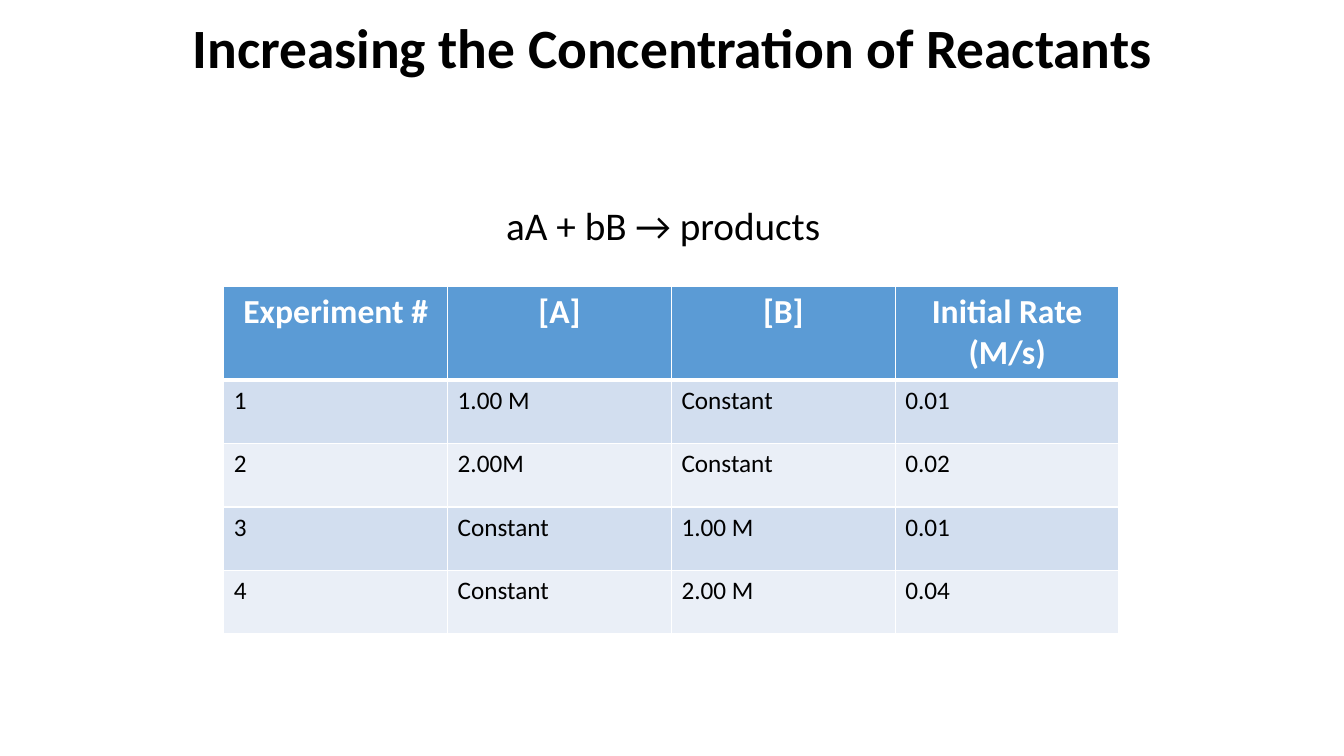
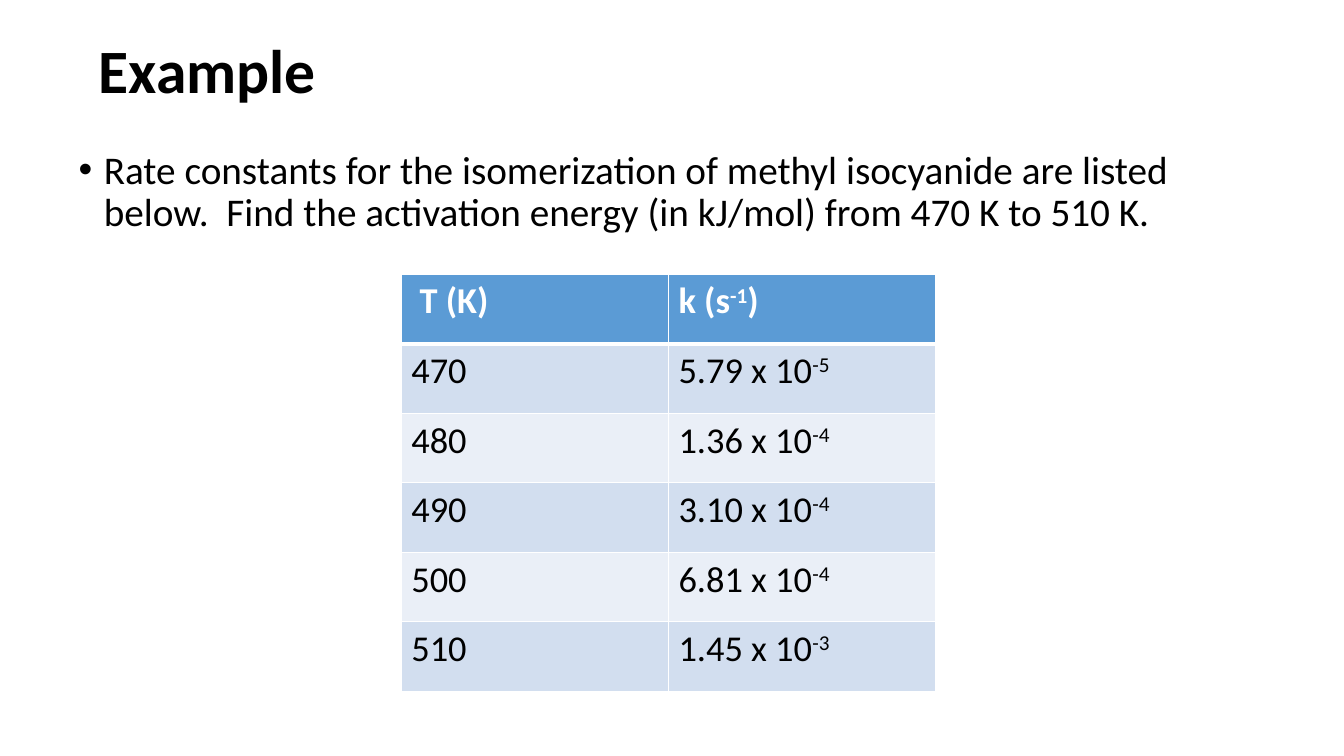
from lxml import etree
from pptx import Presentation
from pptx.dml.color import RGBColor
from pptx.enum.text import MSO_ANCHOR, MSO_AUTO_SIZE, PP_ALIGN
from pptx.oxml.ns import qn
from pptx.util import Inches, Pt

LEFT, CENTER = PP_ALIGN.LEFT, PP_ALIGN.CENTER
TOP, MIDDLE = MSO_ANCHOR.TOP, MSO_ANCHOR.MIDDLE
NO_AUTOFIT = MSO_AUTO_SIZE.NONE

FONT = "Calibri"
COLORS = {"text": "000000", "white": "FFFFFF", "header": "5B9BD5",
          "band_dark": "D2DEEF", "band_light": "EAEFF7"}
SUPERSCRIPT_MARK = "^"

SLIDES = [
    {
        "title": {"text": "Increasing the Concentration of Reactants",
                  "box": (0.92, 0.1, 11.5, 0.8), "size": 39.6, "align": CENTER},
        "body": {"text": "aA + bB → products", "box": (0.92, 2, 11.5, 0.6),
                 "indent": 4, "bullet": False},
        "table": {
            "at": (2.22, 2.84), "column_width": 2.22, "row_heights": (0.93, 0.63),
            "header_size": 24, "size": 18, "header_align": CENTER,
            "rows": [
                ("Experiment #", "[A]", "[B]", "Initial Rate (M/s)"),
                ("1", "1.00 M", "Constant", "0.01"),
                ("2", "2.00M", "Constant", "0.02"),
                ("3", "Constant", "1.00 M", "0.01"),
                ("4", "Constant", "2.00 M", "0.04"),
            ],
        },
    },
    {
        "title": {"text": "Example", "box": (0.88, 0, 11.5, 1.45),
                  "size": 44, "align": LEFT},
        "body": {"text": "Rate constants for the isomerization of methyl isocyanide "
                         "are listed below.  Find the activation energy (in kJ/mol) "
                         "from 470 K to 510 K.",
                 "box": (0.68, 1.44, 11.5, 4.76), "indent": 0.25, "bullet": True},
        "table": {
            "at": (3.98, 2.72), "column_width": 2.65, "row_heights": (0.69, 0.69),
            "header_size": 26, "size": 26, "header_align": LEFT,
            "rows": [
                (" T (K)", "k (s^-1^)"),
                ("470", "5.79 x 10^-5"),
                ("480", "1.36 x 10^-4"),
                ("490", "3.10 x 10^-4"),
                ("500", "6.81 x 10^-4"),
                ("510", "1.45 x 10^-3"),
            ],
        },
    },
]


def write_text(text_frame, text, size, color="text", bold=False, align=LEFT,
               line_spacing=1.0, space_before=0):
    paragraph = text_frame.paragraphs[0]
    paragraph.alignment = align
    paragraph.line_spacing = line_spacing
    paragraph.space_before = Pt(space_before)
    for index, part in enumerate(text.split(SUPERSCRIPT_MARK)):
        if not part:
            continue
        run = paragraph.add_run()
        run.text = part
        run.font.name = FONT
        run.font.size = Pt(size)
        run.font.bold = bold
        run.font.color.rgb = RGBColor.from_string(COLORS[color])
        if index % 2:
            run.font._element.set("baseline", "30000")
    return paragraph


def place_placeholder(shape, box, anchor):
    shape.left, shape.top, shape.width, shape.height = map(Inches, box)
    shape.text_frame.auto_size = NO_AUTOFIT
    shape.text_frame.word_wrap = True
    shape.text_frame.vertical_anchor = anchor


def set_indent(paragraph, indent, bullet):
    properties = paragraph._p.get_or_add_pPr()
    properties.set("marL", str(Inches(indent)))
    properties.set("indent", str(-Inches(indent) if bullet else 0))
    if bullet:
        etree.SubElement(properties, qn("a:buFont"), typeface="Arial")
        etree.SubElement(properties, qn("a:buChar"), char="•")
    else:
        etree.SubElement(properties, qn("a:buNone"))


def set_borders(cell, widths):
    properties = cell._tc.get_or_add_tcPr()
    for side, width in widths.items():
        line = etree.SubElement(properties, qn(f"a:ln{side}"), w=str(Pt(width)))
        fill = etree.SubElement(line, qn("a:solidFill"))
        etree.SubElement(fill, qn("a:srgbClr"), val=COLORS["white"])


def add_data_table(slide, data):
    rows = data["rows"]
    row_count, column_count = len(rows), len(rows[0])
    header_height, row_height = data["row_heights"]
    left, top = data["at"]
    width = data["column_width"] * column_count
    height = header_height + row_height * (row_count - 1)
    table = slide.shapes.add_table(row_count, column_count, Inches(left), Inches(top),
                                   Inches(width), Inches(height)).table
    for column in table.columns:
        column.width = Inches(data["column_width"])
    for row_index, row in enumerate(rows):
        header = row_index == 0
        table.rows[row_index].height = Inches(header_height if header else row_height)
        band = "header" if header else ("band_light", "band_dark")[row_index % 2]
        borders = {"L": 1, "R": 1, "T": 3 if row_index == 1 else 1, "B": 3 if header else 1}
        for column_index, text in enumerate(row):
            cell = table.cell(row_index, column_index)
            set_borders(cell, borders)
            cell.fill.solid()
            cell.fill.fore_color.rgb = RGBColor.from_string(COLORS[band])
            write_text(cell.text_frame, text,
                       size=data["header_size"] if header else data["size"],
                       color="white" if header else "text", bold=header,
                       align=data["header_align"] if header else LEFT)


def add_content_slide(presentation, content):
    slide = presentation.slides.add_slide(presentation.slide_layouts[1])
    title, body = content["title"], content["body"]
    title_shape, body_shape = slide.shapes.title, slide.placeholders[1]
    place_placeholder(title_shape, title["box"], MIDDLE)
    write_text(title_shape.text_frame, title["text"], size=title["size"], bold=True,
               align=title["align"], line_spacing=0.9)
    place_placeholder(body_shape, body["box"], TOP)
    paragraph = write_text(body_shape.text_frame, body["text"], size=28,
                           line_spacing=0.9, space_before=10)
    set_indent(paragraph, body["indent"], body["bullet"])
    add_data_table(slide, content["table"])


def main():
    presentation = Presentation()
    presentation.slide_width = Inches(13.33)
    presentation.slide_height = Inches(7.5)
    for content in SLIDES:
        add_content_slide(presentation, content)
    presentation.save("out.pptx")


if __name__ == "__main__":
    main()
